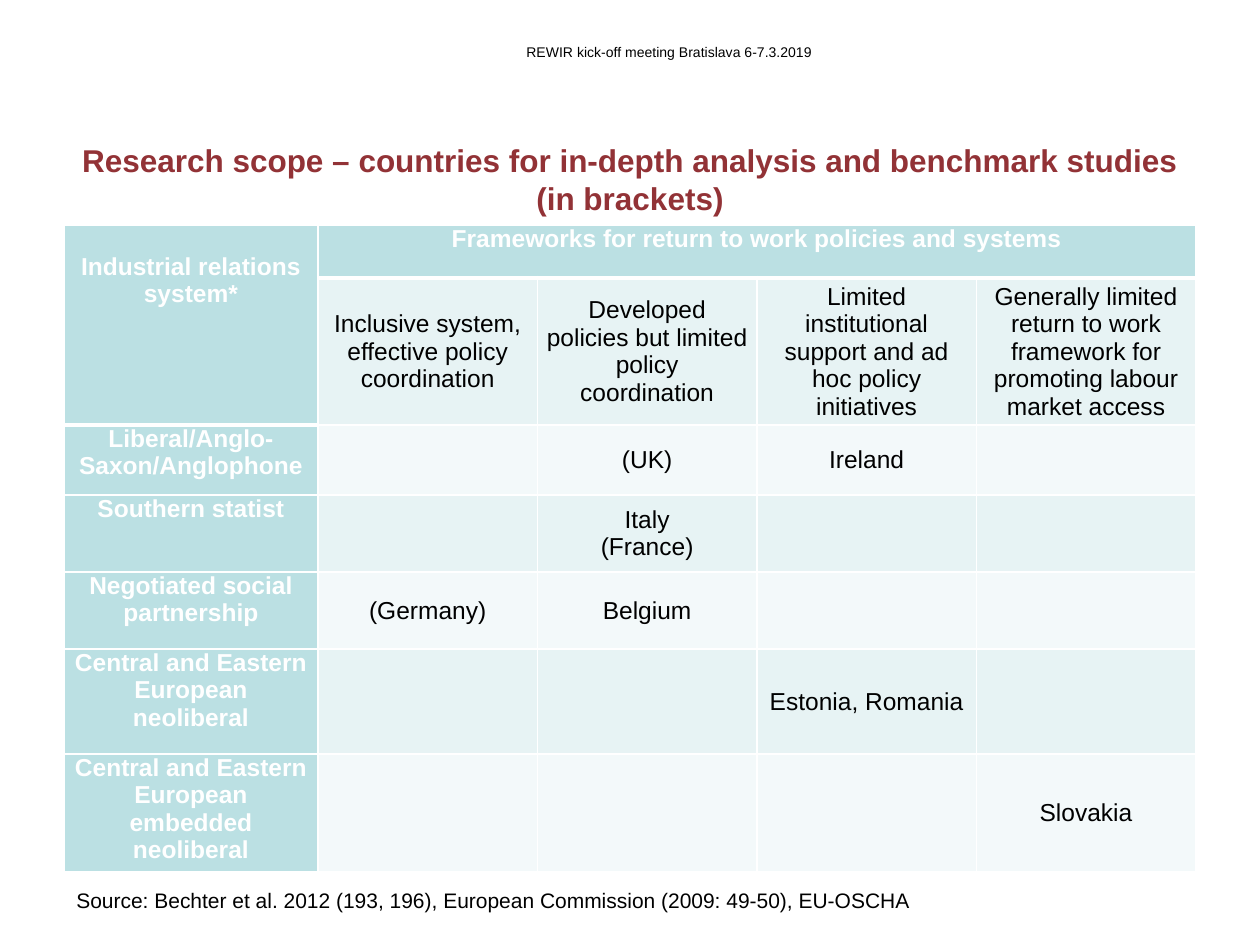
from lxml import etree
from pptx import Presentation, util as u
from pptx.dml.color import RGBColor
from pptx.enum import text
from pptx.oxml.ns import qn

PX = 914400 / 126  # EMU in one px
HEADER_FILL, BANDS = "BBE0E3", ("F3F9FA", "E7F3F4")
WHITE, BLACK = "FFFFFF", "000000"


def format_text(frame, size, color, bold=False, align=text.PP_ALIGN.CENTER):
    for paragraph in frame.paragraphs:
        paragraph.alignment = align
        for run in paragraph.runs:
            run.font.name = "Arial"
            run.font.size = u.Pt(size)
            run.font.bold = bold
            run.font.color.rgb = RGBColor.from_string(color)


def add_border(cell, side, points):
    line = etree.SubElement(cell._tc.get_or_add_tcPr(), qn(f"a:ln{side}"), w=str(u.Pt(points)))
    fill = etree.SubElement(line, qn("a:solidFill"))
    etree.SubElement(fill, qn("a:srgbClr"), val=WHITE)


presentation = Presentation()
presentation.slide_width, presentation.slide_height = u.Inches(10), u.Inches(7.5)
slide = presentation.slides.add_slide(presentation.slide_layouts[5])

# Title
title = slide.shapes.title
title.left, title.top, title.width, title.height = [round(v * PX) for v in (64, 135, 1132, 89)]
frame = title.text_frame
frame.text = "Research scope – countries for in-depth analysis and benchmark studies (in brackets)"
frame.word_wrap = True
frame.auto_size = text.MSO_AUTO_SIZE.NONE
frame.vertical_anchor = text.MSO_ANCHOR.TOP
format_text(frame, 18, "923236", bold=True)

# Meeting line and source line
notes = [
    ("REWIR kick-off meeting Bratislava 6-7.3.2019", 8, (514, 37, 630, 30), True),
    ("Source: Bechter et al. 2012 (193, 196), European Commission (2009: 49-50), EU-OSCHA",
     12, (64, 881, 871, 38), False),
]
for words, size, place, wrap in notes:
    box = slide.shapes.add_textbox(*[round(v * PX) for v in place])
    box.text_frame.text = words
    box.text_frame.word_wrap = wrap
    format_text(box.text_frame, size, BLACK, align=text.PP_ALIGN.LEFT)

# Table of industrial relations systems against policy frameworks
rows = [
    ["Industrial relations system*", "Frameworks for return to work policies and systems", "", "", ""],
    ["", "Inclusive system, effective policy coordination",
     "Developed policies but limited policy coordination",
     "Limited institutional support and ad hoc policy initiatives",
     "Generally limited return to work framework for promoting labour market access"],
    ["Liberal/Anglo-Saxon/Anglophone", "", "(UK)", "Ireland", ""],
    ["Southern statist", "", "Italy\n(France)", "", ""],
    ["Negotiated social partnership", "(Germany)", "Belgium", "", ""],
    ["Central and Eastern European neoliberal", "", "", "Estonia, Romania", ""],
    ["Central and Eastern European embedded neoliberal", "", "", "", "Slovakia"],
]
widths = [254] + [219.5] * 4
heights = [53, 147, 70, 77, 77, 105, 117]
table = slide.shapes.add_table(
    len(rows), len(widths),
    *[round(v * PX) for v in (64, 225, sum(widths), sum(heights))]).table
for column, width in zip(table.columns, widths):
    column.width = round(width * PX)
for row, height in zip(table.rows, heights):
    row.height = round(height * PX)

for r, values in enumerate(rows):
    for c, words in enumerate(values):
        cell = table.cell(r, c)
        is_header = r == 0 or c == 0
        cell.margin_left = cell.margin_right = round(9 * PX)
        cell.margin_top = cell.margin_bottom = 0
        cell.vertical_anchor = text.MSO_ANCHOR.TOP if is_header else text.MSO_ANCHOR.MIDDLE
        # Thick rule under the header row and under the merged corner
        thick_top = r == (2 if c == 0 else 1)
        thick_bottom = r == 0 or (r == 1 and c == 0)
        for side, points in (("L", 1), ("R", 1), ("T", 3 if thick_top else 1),
                             ("B", 3 if thick_bottom else 1)):
            add_border(cell, side, points)
        cell.fill.solid()
        cell.fill.fore_color.rgb = RGBColor.from_string(HEADER_FILL if is_header else BANDS[r % 2])
        if words:
            cell.text_frame.text = words
        format_text(cell.text_frame, 14, WHITE if is_header else BLACK, bold=is_header)

# Merged headers; the corner text starts one line down
table.cell(0, 0).merge(table.cell(1, 0))
table.cell(0, 1).merge(table.cell(0, 4))
table.cell(0, 0).margin_top = round(28 * PX)

presentation.save("out.pptx")
